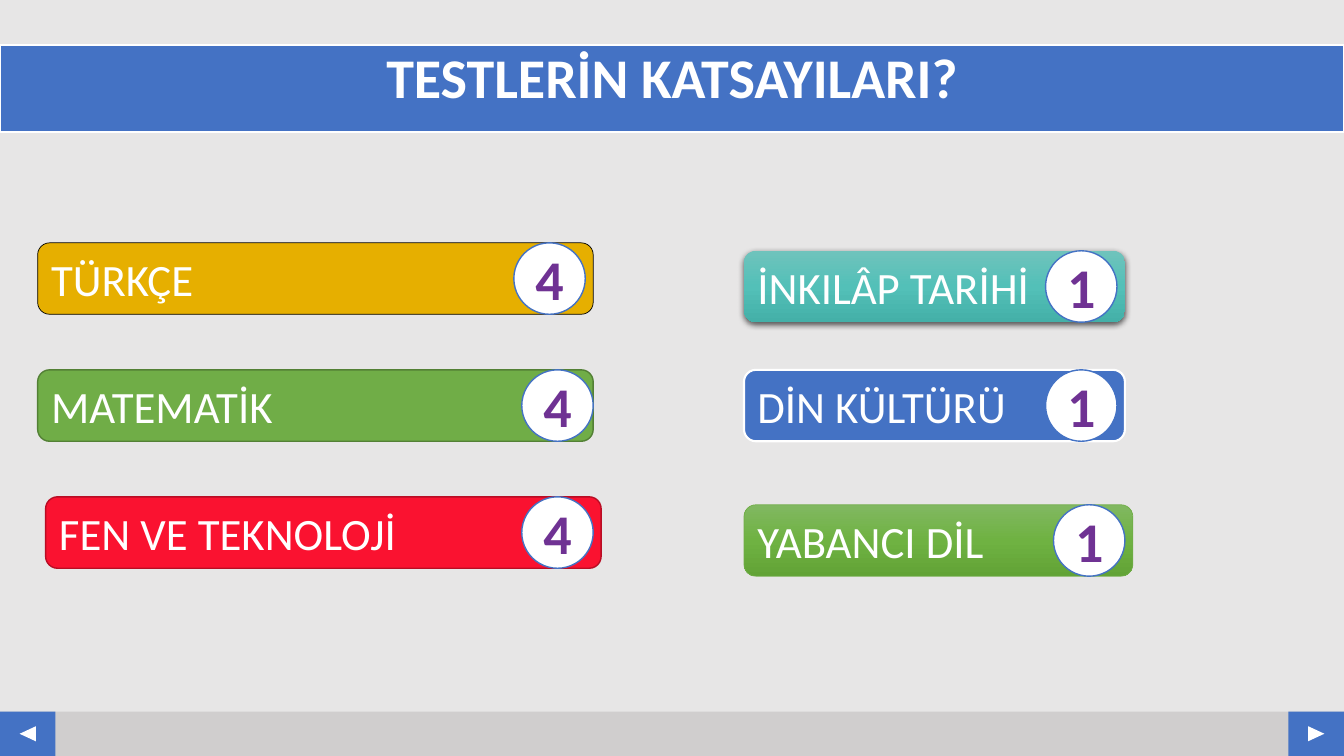
from copy import deepcopy

from lxml import etree
from pptx import Presentation
from pptx.dml.color import RGBColor
from pptx.enum.shapes import MSO_SHAPE
from pptx.enum.text import MSO_ANCHOR, PP_ALIGN
from pptx.oxml.ns import qn
from pptx.util import Cm, Pt

RECT = MSO_SHAPE.RECTANGLE
BAR = MSO_SHAPE.FLOWCHART_ALTERNATE_PROCESS
CIRCLE = MSO_SHAPE.OVAL
TRIANGLE = MSO_SHAPE.ISOSCELES_TRIANGLE
LEFT, CENTER = PP_ALIGN.LEFT, PP_ALIGN.CENTER
TOP, MIDDLE = MSO_ANCHOR.TOP, MSO_ANCHOR.MIDDLE

WHITE = RGBColor(0xFF, 0xFF, 0xFF)
BLACK = RGBColor(0, 0, 0)
PAGE = RGBColor(0xE7, 0xE6, 0xE6)
FOOTER = RGBColor(0xD0, 0xCE, 0xCE)
BLUE = RGBColor(0x44, 0x72, 0xC4)
PURPLE = RGBColor(0x6F, 0x32, 0x93)
AMBER = RGBColor(0xE6, 0xAF, 0x00)
GREEN = RGBColor(0x70, 0xAD, 0x47)
DARK_GREEN = RGBColor(0x53, 0x80, 0x35)
RED = RGBColor(0xFA, 0x12, 0x30)
DARK_RED = RGBColor(0xB9, 0x0D, 0x24)
TEAL_SHADES = (RGBColor(0x6F, 0xC3, 0xBC), RGBColor(0x53, 0xC0, 0xB8),
               RGBColor(0x44, 0xB0, 0xA8))
GREEN_SHADES = (RGBColor(0x81, 0xB8, 0x61), RGBColor(0x6F, 0xB2, 0x42),
                RGBColor(0x62, 0xA3, 0x36))

SLIDE_W, SLIDE_H = 33.87, 19.05
BAR_H = 1.8


def fill_gradient(s, shades):
    s.fill.gradient()
    s.fill.gradient_angle = 270
    stops = s._element.spPr.find(qn("a:gradFill")).find(qn("a:gsLst"))
    stops.insert(1, deepcopy(stops[0]))
    for i, (stop, shade) in enumerate(zip(s.fill.gradient_stops, shades)):
        stop.color.rgb = shade
        stop.position = i / 2


def add_shape(slide, kind, x, y, w, h, fill, line=None, line_w=1):
    s = slide.shapes.add_shape(kind, Cm(x), Cm(y), Cm(w), Cm(h))
    s.shadow.inherit = False
    if isinstance(fill, tuple) and not isinstance(fill, RGBColor):
        fill_gradient(s, fill)
    else:
        s.fill.solid()
        s.fill.fore_color.rgb = fill
    if line is None:
        s.line.fill.background()
    else:
        s.line.color.rgb = line
        s.line.width = Pt(line_w)
    return s


def add_shadow(s):
    effects = s._element.spPr.find(qn("a:effectLst"))
    shadow = etree.SubElement(effects, qn("a:outerShdw"), blurRad=str(Pt(4.5)),
                              dist=str(Pt(1.5)), dir="5400000", rotWithShape="0")
    color = etree.SubElement(shadow, qn("a:srgbClr"), val=str(BLACK))
    etree.SubElement(color, qn("a:alpha"), val="63000")


def write(s, text, size=32, color=WHITE, bold=False, align=LEFT, anchor=MIDDLE,
          spacing=1.0):
    tf = s.text_frame
    tf.word_wrap = True
    tf.vertical_anchor = anchor
    p = tf.paragraphs[0]
    p.alignment = align
    p.line_spacing = spacing
    r = p.add_run()
    r.text = text
    r.font.name = "Calibri"
    r.font.size = Pt(size)
    r.font.bold = bold
    r.font.color.rgb = color


def add_footer(slide, x, y, w, h):
    button_w, arrow_w, arrow_h = 1.4, 0.38, 0.41
    add_shape(slide, RECT, x, y, w, h, FOOTER)
    for left, turn in ((x, 270), (x + w - button_w, 90)):
        add_shape(slide, RECT, left, y, button_w, h, BLUE)
        s = add_shape(slide, TRIANGLE, left + (button_w - arrow_w) / 2,
                      y + (h - arrow_h) / 2, arrow_w, arrow_h, WHITE)
        s.rotation = turn


def add_title(slide, x, y, w, h):
    s = add_shape(slide, RECT, x, y, w, h, BLUE, WHITE, 1.5)
    write(s, "TESTLERİN KATSAYILARI?", size=40, bold=True, align=CENTER,
          anchor=TOP, spacing=0.9)


def add_subject(slide, x, y, w, h, name, weight, fill, line=None, line_w=1,
                gap=0.2, shadow=False):
    s = add_shape(slide, BAR, x, y, w, h, fill, line, line_w)
    if shadow:
        add_shadow(s)
    write(s, name)
    badge = add_shape(slide, CIRCLE, x + w - gap - h, y, h, h, WHITE, BLUE)
    write(badge, weight, size=40, color=PURPLE, bold=True, align=CENTER)


def main():
    prs = Presentation()
    prs.slide_width, prs.slide_height = Cm(SLIDE_W), Cm(SLIDE_H)
    slide = prs.slides.add_slide(prs.slide_layouts[6])
    slide.background.fill.solid()
    slide.background.fill.fore_color.rgb = PAGE

    add_footer(slide, 0, 17.93, SLIDE_W, SLIDE_H - 17.93)
    add_title(slide, 0, 1.13, SLIDE_W, 2.2)

    add_subject(slide, 0.95, 6.12, 14, BAR_H, "TÜRKÇE", "4", AMBER, BLACK, 0.5)
    add_subject(slide, 0.95, 9.32, 14, BAR_H, "MATEMATİK", "4", GREEN,
                DARK_GREEN, gap=0)
    add_subject(slide, 1.15, 12.52, 14, BAR_H, "FEN VE TEKNOLOJİ", "4", RED,
                DARK_RED)
    add_subject(slide, 18.75, 6.32, 9.6, BAR_H, "İNKILÂP TARİHİ", "1",
                TEAL_SHADES, shadow=True)
    add_subject(slide, 18.75, 9.32, 9.6, BAR_H, "DİN KÜLTÜRÜ", "1", BLUE,
                WHITE, 1.5)
    add_subject(slide, 18.75, 12.72, 9.8, BAR_H, "YABANCI DİL", "1",
                GREEN_SHADES, GREEN, 0.5)
    prs.save("out.pptx")


if __name__ == "__main__":
    main()
